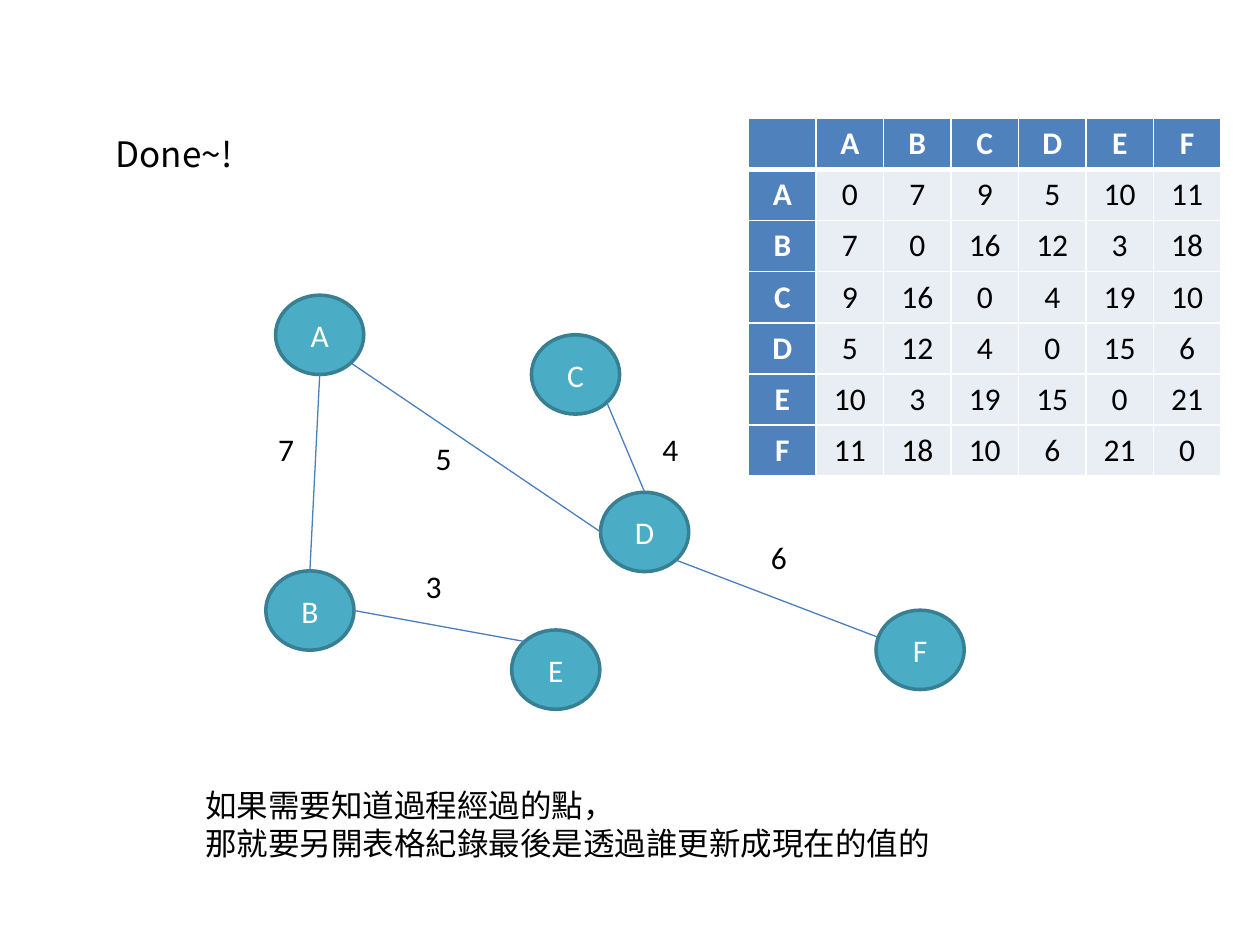
from dataclasses import dataclass
from typing import Any

from lxml.etree import SubElement
from pptx import Presentation
from pptx.dml.color import RGBColor
from pptx.enum.shapes import MSO_CONNECTOR, MSO_SHAPE
from pptx.enum.text import MSO_ANCHOR, MSO_AUTO_SIZE, PP_ALIGN
from pptx.oxml import parse_xml
from pptx.oxml.ns import nsdecls, qn
from pptx.util import Pt

WHITE = RGBColor(0xFF, 0xFF, 0xFF)
BLACK = RGBColor(0x00, 0x00, 0x00)
TEAL = RGBColor(0x4B, 0xAC, 0xC6)
DARK_TEAL = RGBColor(0x37, 0x7F, 0x92)
EDGE_BLUE = RGBColor(0x4B, 0x7E, 0xBC)
HEADER_BLUE = RGBColor(0x4F, 0x81, 0xBD)
PALE_BLUE = RGBColor(0xE9, 0xED, 0xF4)

LATIN_FONT = "Calibri"
CJK_FONT = "Noto Sans CJK SC"
NODE_WIDTH, NODE_HEIGHT = 50.4, 45.36
LABEL_WIDTH, LABEL_HEIGHT = 24.5, 29

# Points on a node's outline, as multiples of its two radii
TOP, BOTTOM, LEFT, RIGHT = (0, -1), (0, 1), (-1, 0), (1, 0)
UPPER_LEFT, LOWER_RIGHT = (-0.71, -0.71), (0.71, 0.71)
INSIDE_LEFT = (-0.77, -0.24)


@dataclass(frozen=True)
class Node:
    name: str
    left: float
    top: float

    def anchor(self, site: tuple[float, float]) -> tuple[Pt, Pt]:
        return (Pt(self.left + NODE_WIDTH / 2 * (1 + site[0])),
                Pt(self.top + NODE_HEIGHT / 2 * (1 + site[1])))


@dataclass(frozen=True)
class Edge:
    start: str
    start_site: tuple[float, float]
    end: str
    end_site: tuple[float, float]


@dataclass(frozen=True)
class Label:
    text: str
    left: float
    top: float
    width: float = LABEL_WIDTH
    height: float = LABEL_HEIGHT
    font: str = LATIN_FONT
    size: float = 18


NODES = {node.name: node for node in (
    Node("A", 157.5, 168.7), Node("C", 303.7, 191.3), Node("B", 151.9, 326.2),
    Node("E", 292.4, 360), Node("D", 343.2, 281.3), Node("F", 500.6, 348.7),
)}
EDGES = (
    Edge("A", BOTTOM, "B", TOP),
    Edge("B", RIGHT, "E", UPPER_LEFT),
    Edge("C", LOWER_RIGHT, "D", TOP),
    Edge("D", LOWER_RIGHT, "F", INSIDE_LEFT),
    Edge("A", LOWER_RIGHT, "D", LEFT),
)
WEIGHTS = (
    Label("7", 151.9, 241.9), Label("5", 241.9, 247.5), Label("4", 371.5, 241.9),
    Label("3", 236.2, 320.6), Label("6", 433.4, 303.7),
)
HEADING = Label("Done~!", 59, 72, 87.1, 31.5, CJK_FONT, 20)
NOTE = Label("如果需要知道過程經過的點，\n那就要另開表格紀錄最後是透過誰更新成現在的值的",
             110.2, 445.7, 432.7, 50.9, CJK_FONT)
DISTANCES = {
    "A": (0, 7, 9, 5, 10, 11),
    "B": (7, 0, 16, 12, 3, 18),
    "C": (9, 16, 0, 4, 19, 10),
    "D": (5, 12, 4, 0, 15, 6),
    "E": (10, 3, 19, 15, 0, 21),
    "F": (11, 18, 10, 6, 21, 0),
}


def write_text(frame: Any, text: str, color: RGBColor, font: str = LATIN_FONT,
               size: float = 18, bold: bool = False,
               alignment: PP_ALIGN = PP_ALIGN.CENTER) -> None:
    for index, line in enumerate(text.split("\n")):
        para = frame.add_paragraph() if index else frame.paragraphs[0]
        para.alignment = alignment
        span = para.add_run()
        span.text = line
        font_format = {"name": font, "size": Pt(size), "bold": bold}
        for attribute, value in font_format.items():
            setattr(span.font, attribute, value)
        span.font.color.rgb = color
        if font == CJK_FONT:
            SubElement(span.font._element, qn("a:ea"), typeface=font)


def add_node(page: Any, node: Node) -> None:
    oval = page.shapes.add_shape(MSO_SHAPE.OVAL, Pt(node.left), Pt(node.top),
                                 Pt(NODE_WIDTH), Pt(NODE_HEIGHT))
    oval.shadow.inherit = False
    oval.fill.solid()
    oval.fill.fore_color.rgb = TEAL
    oval.line.color.rgb = DARK_TEAL
    oval.line.width = Pt(2)
    oval.text_frame.vertical_anchor = MSO_ANCHOR.MIDDLE
    write_text(oval.text_frame, node.name, WHITE)


def add_edge(page: Any, edge: Edge) -> None:
    line = page.shapes.add_connector(
        MSO_CONNECTOR.STRAIGHT,
        *NODES[edge.start].anchor(edge.start_site),
        *NODES[edge.end].anchor(edge.end_site))
    line.line.color.rgb = EDGE_BLUE
    line.line.width = Pt(0.75)
    SubElement(line._element.spPr, qn("a:effectLst"))


def add_label(page: Any, label: Label) -> None:
    box = page.shapes.add_textbox(Pt(label.left), Pt(label.top),
                                  Pt(label.width), Pt(label.height))
    frame_format = {"word_wrap": False, "auto_size": MSO_AUTO_SIZE.SHAPE_TO_FIT_TEXT}
    for attribute, value in frame_format.items():
        setattr(box.text_frame, attribute, value)
    write_text(box.text_frame, label.text, BLACK, label.font, label.size,
               alignment=PP_ALIGN.LEFT)


def set_borders(cell: Any, widths: dict[str, float]) -> None:
    """Give the cell white borders; widths follow schema order: L, R, T, B."""
    properties = cell._tc.get_or_add_tcPr()
    for index, (side, width) in enumerate(widths.items()):
        properties.insert(index, parse_xml(
            f'<a:ln{side} {nsdecls("a")} w="{Pt(width)}"><a:solidFill>'
            f'<a:srgbClr val="{WHITE}"/></a:solidFill></a:ln{side}>'))


def add_distance_table(page: Any) -> None:
    rows = [("", *DISTANCES)] + [(name, *values) for name, values in DISTANCES.items()]
    count = len(rows)
    table = page.shapes.add_table(count, count, Pt(427.8), Pt(67.7),
                                  Pt(270), Pt(204.5)).table
    table.horz_banding = False
    for row_index, values in enumerate(rows):
        for column_index, value in enumerate(values):
            cell = table.cell(row_index, column_index)
            is_header = row_index == 0 or column_index == 0
            cell.fill.solid()
            cell.fill.fore_color.rgb = HEADER_BLUE if is_header else PALE_BLUE
            set_borders(cell, {"L": 1, "R": 1, "T": 3 if row_index == 1 else 1,
                               "B": 3 if row_index == 0 else 1})
            if value != "":
                write_text(cell.text_frame, str(value),
                           WHITE if is_header else BLACK, bold=is_header)


def main() -> None:
    deck = Presentation()
    deck.slide_width, deck.slide_height = Pt(720), Pt(540)
    page = deck.slides.add_slide(deck.slide_layouts[6])
    *covered_nodes, front_node = NODES.values()
    for node in covered_nodes:
        add_node(page, node)
    for edge in EDGES:
        add_edge(page, edge)
    for label in (*WEIGHTS, HEADING):
        add_label(page, label)
    add_distance_table(page)
    add_node(page, front_node)
    add_label(page, NOTE)
    deck.save("out.pptx")


if __name__ == "__main__":
    main()
